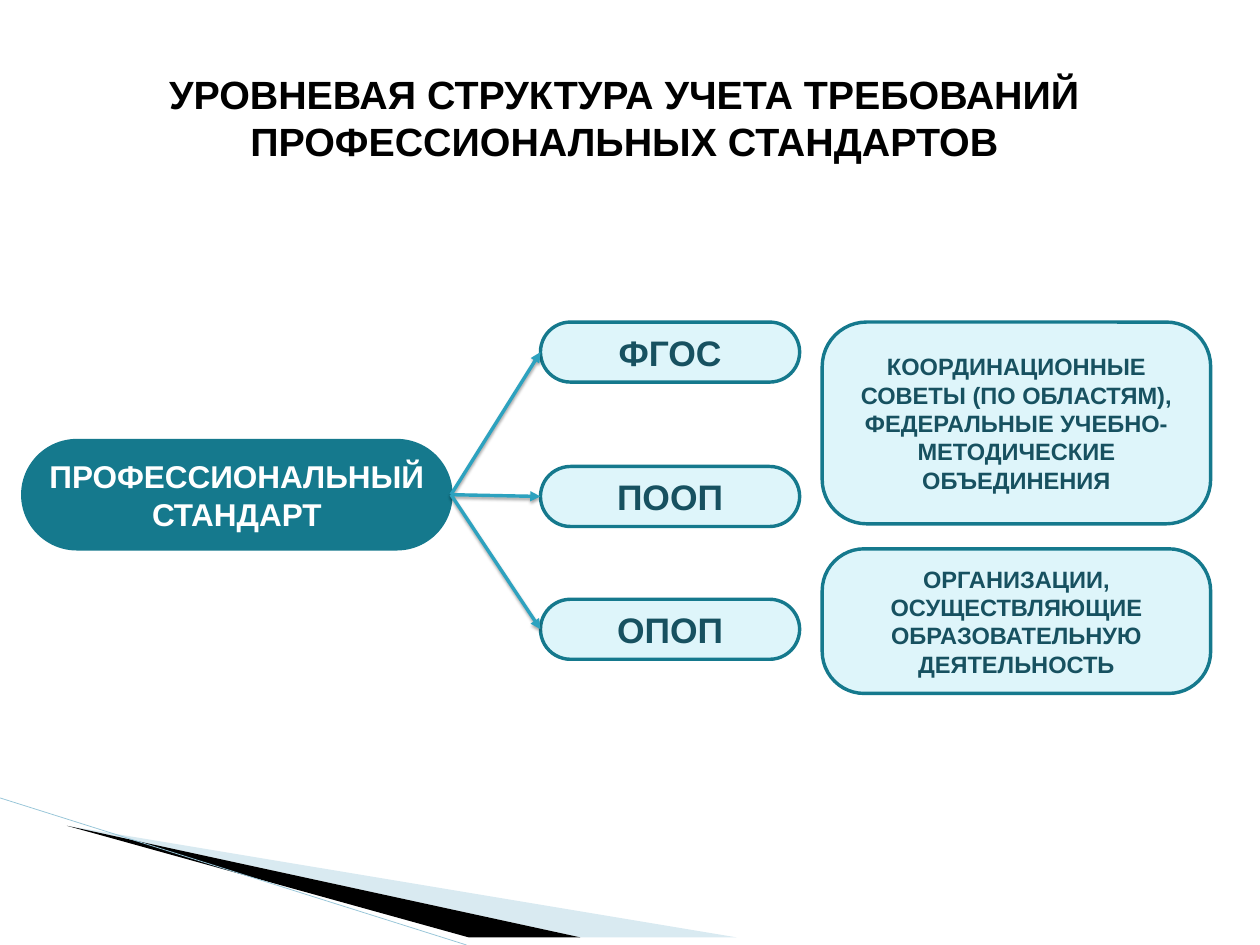
from pptx import Presentation
from pptx.util import Cm, Pt
from pptx.dml.color import RGBColor
from pptx.enum import shapes as sh, text as tx
from pptx.oxml import parse_xml
from pptx.oxml.ns import nsdecls

TEAL = RGBColor(0x15, 0x79, 0x8D)
PALE = RGBColor(0xDE, 0xF5, 0xFA)
DARK = RGBColor(0x17, 0x51, 0x60)
CYAN = RGBColor(0x2D, 0xA2, 0xBF)
MIST = RGBColor(0xD9, 0xEA, 0xF1)
SKY = RGBColor(0x97, 0xC5, 0xD8)
WHITE = RGBColor(255, 255, 255)
BLACK = RGBColor(0, 0, 0)

deck = Presentation()
deck.slide_width, deck.slide_height = Cm(56.44), Cm(42.34)
slide = deck.slides.add_slide(deck.slide_layouts[5])
parts = slide.shapes


def write(frame, words, size, color):
    frame.word_wrap = True
    para = frame.paragraphs[0]
    para.alignment = tx.PP_ALIGN.CENTER
    run = para.add_run()
    run.text = words
    font = run.font
    font.name, font.size, font.bold = "Arial", Pt(size), True
    font.color.rgb = color


def add_box(left, top, width, height, round_by, words, size, fill, ink):
    box = parts.add_shape(sh.MSO_SHAPE.ROUNDED_RECTANGLE,
                          Cm(left), Cm(top), Cm(width), Cm(height))
    box.adjustments[0] = round_by
    box.shadow.inherit = False
    box.fill.solid()
    box.fill.fore_color.rgb = fill
    box.line.color.rgb = TEAL
    box.line.width = Pt(4.33)
    box.text_frame.vertical_anchor = tx.MSO_ANCHOR.MIDDLE
    write(box.text_frame, words, size, ink)
    return box


# Corner wedges
wedges = [
    (MIST, [(3.07, 36.7), (33.4, 42.34), (25.73, 42.34)]),
    (BLACK, [(3, 36.68), (25.78, 42.34), (20.98, 42.34)]),
]
for color, dots in wedges:
    pen = parts.build_freeform(*dots[0], scale=Cm(1))
    pen.add_line_segments(dots[1:])
    wedge = pen.convert_to_shape()
    wedge.shadow.inherit = False
    wedge.fill.solid()
    wedge.fill.fore_color.rgb = color
    wedge.line.fill.background()

edge = parts.add_connector(sh.MSO_CONNECTOR.STRAIGHT,
                           Cm(0), Cm(35.75), Cm(20.9), Cm(42.34))
edge.line.color.rgb = SKY
edge.line.width = Pt(0.95)
edge._element.spPr.append(parse_xml(f"<a:effectLst {nsdecls('a')}/>"))

# Title
title = parts.title
title.left, title.top, title.width, title.height = Cm(7), Cm(3), Cm(41.96), Cm(3.58)
title.text_frame.auto_size = tx.MSO_AUTO_SIZE.NONE
title.text_frame.vertical_anchor = tx.MSO_ANCHOR.TOP
write(title.text_frame,
      "УРОВНЕВАЯ СТРУКТУРА УЧЕТА ТРЕБОВАНИЙ ПРОФЕССИОНАЛЬНЫХ СТАНДАРТОВ",
      50, BLACK)

# Responsible bodies
bodies = [
    (14.43, 9.04, 0.22, "КООРДИНАЦИОННЫЕ СОВЕТЫ (ПО ОБЛАСТЯМ), "
     "ФЕДЕРАЛЬНЫЕ УЧЕБНО-МЕТОДИЧЕСКИЕ ОБЪЕДИНЕНИЯ"),
    (24.59, 6.48, 0.29, "ОРГАНИЗАЦИИ, ОСУЩЕСТВЛЯЮЩИЕ ОБРАЗОВАТЕЛЬНУЮ ДЕЯТЕЛЬНОСТЬ"),
]
for top, height, bend, words in bodies:
    add_box(36.83, top, 17.4, height, bend, words, 30, PALE, DARK)

# Standard and the levels it leads to
root = add_box(1.02, 19.74, 19.18, 4.85, 0.5,
               "ПРОФЕССИОНАЛЬНЫЙ СТАНДАРТ", 40, TEAL, WHITE)
for top, words in [(14.43, "ФГОС"), (20.9, "ПООП"), (26.85, "ОПОП")]:
    level = add_box(24.21, top, 11.61, 2.69, 0.5, words, 45, PALE, DARK)
    arrow = parts.add_connector(sh.MSO_CONNECTOR.STRAIGHT, 0, 0, 0, 0)
    arrow.begin_connect(root, 3)
    arrow.end_connect(level, 1)
    arrow.line.color.rgb = CYAN
    arrow.line.width = Pt(4.33)
    # Arrowhead and soft shadow
    arrow.line._get_or_add_ln().append(
        parse_xml(f"<a:tailEnd {nsdecls('a')} type='triangle'/>"))
    arrow._element.spPr.append(parse_xml(
        f"<a:effectLst {nsdecls('a')}>"
        f"<a:outerShdw blurRad='{Pt(4)}' dist='{Pt(3)}' dir='5400000' rotWithShape='0'>"
        "<a:srgbClr val='000000'><a:alpha val='35000'/></a:srgbClr>"
        "</a:outerShdw></a:effectLst>"))

deck.save("out.pptx")
